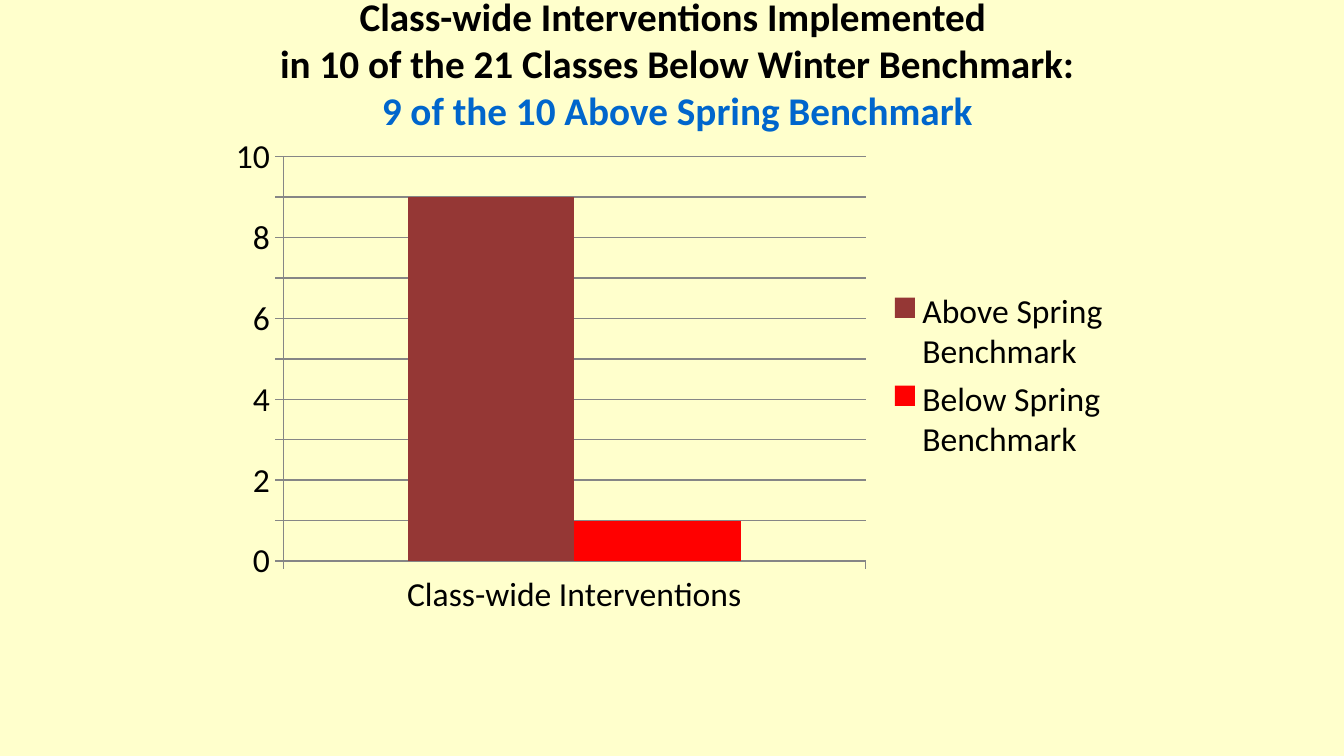
from pptx import Presentation
from pptx.chart.data import CategoryChartData
from pptx.dml.color import RGBColor
from pptx.enum import chart as ch, text
from pptx.util import Inches, Pt

COLORS = {"background": "FFFFCC", "text": "000000", "accent": "0066CC", "axis": "868686"}
FONT = "Calibri"
TITLE_LINES = [
    ("Class-wide Interventions Implemented ", "text"),
    ("in 10 of the 21 Classes Below Winter Benchmark:", "text"),
    ("9 of the 10 Above Spring Benchmark", "accent"),
]
CATEGORIES = ["Class-wide Interventions"]
SERIES = [
    ("Above Spring Benchmark", [9], "953735"),
    ("Below Spring Benchmark", [1], "FF0000"),
]


def rgb(name):
    return RGBColor.from_string(COLORS[name])


def place(shape, left, top, width, height):
    shape.left, shape.top = Inches(left), Inches(top)
    shape.width, shape.height = Inches(width), Inches(height)


def add_title(slide):
    title = slide.shapes.title
    place(title, 0.54, 0, 9, 0.94)
    frame = title.text_frame
    frame.word_wrap = True
    frame.auto_size = text.MSO_AUTO_SIZE.NONE
    frame.vertical_anchor = text.MSO_ANCHOR.MIDDLE
    paragraph = frame.paragraphs[0]
    paragraph.alignment = text.PP_ALIGN.CENTER
    paragraph.font.name, paragraph.font.size = FONT, Pt(21)
    paragraph.font.bold = True
    for index, (line, color) in enumerate(TITLE_LINES):
        if index:
            paragraph.add_line_break()
        run = paragraph.add_run()
        run.text = line
        run.font.color.rgb = rgb(color)


def add_benchmark_chart(slide):
    data = CategoryChartData()
    data.categories = CATEGORIES
    for name, values, _ in SERIES:
        data.add_series(name, values)
    chart = slide.shapes.add_chart(
        ch.XL_CHART_TYPE.COLUMN_CLUSTERED,
        Inches(1.62), Inches(0.94), Inches(6.75), Inches(3.71), data).chart
    chart.has_title = False
    chart.font.name, chart.font.size = FONT, Pt(18)
    chart.font.color.rgb = rgb("text")
    chart.has_legend = True
    chart.legend.position = ch.XL_LEGEND_POSITION.RIGHT
    chart.legend.include_in_layout = False

    plot = chart.plots[0]
    plot.gap_width, plot.overlap = 150, 0
    plot.vary_by_categories = False
    for series, (_, _, color) in zip(plot.series, SERIES):
        series.format.fill.solid()
        series.format.fill.fore_color.rgb = RGBColor.from_string(color)

    counts = chart.value_axis
    counts.minimum_scale, counts.maximum_scale, counts.major_unit = 0, 10, 1
    counts.has_major_gridlines = True
    for axis in (chart.category_axis, counts):
        axis.major_tick_mark = ch.XL_TICK_MARK.OUTSIDE
    for part in (chart.category_axis, counts, counts.major_gridlines):
        part.format.line.color.rgb = rgb("axis")
        part.format.line.width = Pt(0.75)


def main():
    deck = Presentation()
    deck.slide_width = Inches(10)
    deck.slide_height = deck.slide_width * 9 // 16
    slide = deck.slides.add_slide(deck.slide_layouts[5])
    slide.background.fill.solid()
    slide.background.fill.fore_color.rgb = rgb("background")
    add_title(slide)
    add_benchmark_chart(slide)
    deck.save("out.pptx")


if __name__ == "__main__":
    main()
